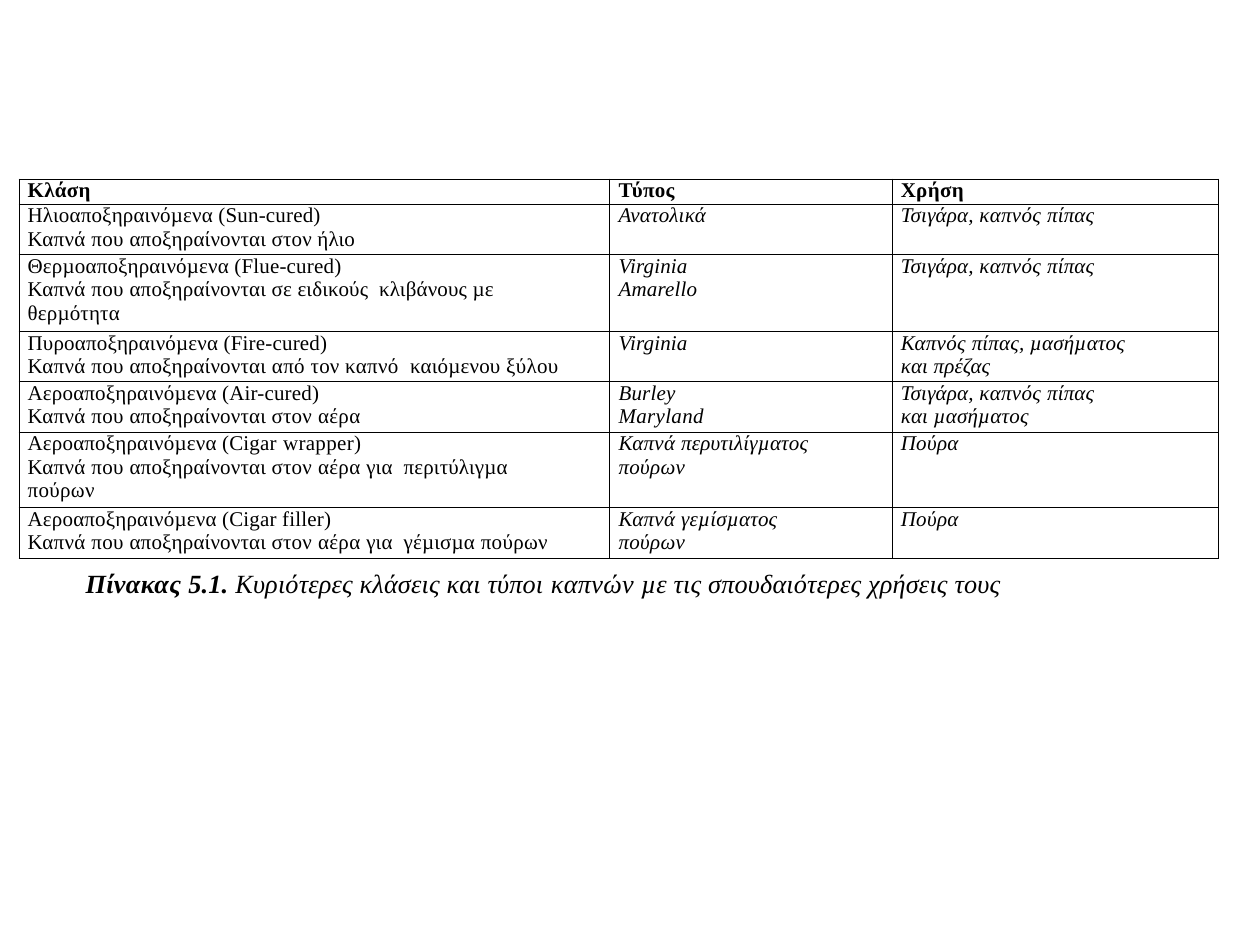
import dataclasses

import pptx
import pptx.dml.color
import pptx.oxml
import pptx.oxml.ns
import pptx.util

Inches = pptx.util.Inches
Pt = pptx.util.Pt


@dataclasses.dataclass
class Theme:
    font: str = "Times New Roman"
    ink: str = "000000"
    body: int = 12
    note: int = 15
    rule: float = 0.48
    tight: int = 10
    wide: int = 20


class Sheet:
    """Draws the elements of one slide in one theme; a bar in a text toggles tight and wide tracking."""

    def __init__(self, slide, theme):
        self.slide = slide
        self.theme = theme

    def runs(self, para, text, size, bold=False, italic=False):
        for n, part in enumerate(text.split("|")):
            if not part:
                continue
            run = para.add_run()
            run.text = part
            font = run.font
            font.name = self.theme.font
            font.size = Pt(size)
            font.bold = bold
            font.italic = italic
            font.color.rgb = pptx.dml.color.RGBColor.from_string(self.theme.ink)
            track = self.theme.wide if n % 2 else self.theme.tight
            run._r.get_or_add_rPr().set("spc", str(track))

    def border(self, cell):
        props = cell._tc.get_or_add_tcPr()
        space = pptx.oxml.ns.nsdecls("a")
        for n, side in enumerate(("lnL", "lnR", "lnT", "lnB")):
            props.insert(n, pptx.oxml.parse_xml(
                f'<a:{side} {space} w="{Pt(self.theme.rule)}"><a:solidFill>'
                f'<a:srgbClr val="{self.theme.ink}"/></a:solidFill></a:{side}>'))

    def cell(self, cell, text, bold, italic, right):
        cell.margin_left = Inches(0.07)
        cell.margin_right = Inches(right)
        cell.margin_top = cell.margin_bottom = 0
        cell.fill.background()
        self.border(cell)
        frame = cell.text_frame
        for n, line in enumerate(text.split("\n")):
            para = frame.add_paragraph() if n else frame.paragraphs[0]
            para.space_before = Pt(0.1 if n else 0)
            self.runs(para, line, self.theme.body, bold, italic)

    def table(self, rows, left, top, widths, heights):
        frame = self.slide.shapes.add_table(
            len(rows), len(widths), Inches(left), Inches(top),
            Inches(sum(widths)), Inches(sum(heights)))
        grid = frame.table
        grid.first_row = grid.horz_banding = False
        for col, width in zip(grid.columns, widths):
            col.width = Inches(width)
        for r, (row, height) in enumerate(zip(rows, heights)):
            grid.rows[r].height = Inches(height)
            for c, text in enumerate(row):
                self.cell(grid.cell(r, c), text, bold=r == 0,
                          italic=r > 0 and c > 0, right=0 if c else 0.3)

    def note(self, label, text, left, top, width, height):
        frame = self.slide.shapes.add_textbox(
            Inches(left), Inches(top), Inches(width), Inches(height)).text_frame
        frame.word_wrap = True
        frame.margin_left = frame.margin_right = 0
        frame.margin_top = frame.margin_bottom = 0
        para = frame.paragraphs[0]
        self.runs(para, label, self.theme.note, bold=True, italic=True)
        self.runs(para, text, self.theme.note, italic=True)


PIPE = "Τσιγάρα, |καπνός |πίπας"
DRIED = "|Καπνά που |αποξηραίνονται "
ROWS = [
    ("|Κλάση", "|Τύπος", "|Χρήση"),
    (f"Ηλιοαποξηραινόµενα (Sun-cured)\n{DRIED}στον ήλιο", "Ανατολικά", PIPE),
    (f"Θερµοαποξηραινόµενα (Flue-cured)\n{DRIED}σε ειδικούς  κλιβάνους µε θερµότητα",
     "Virginia\nAmarello", PIPE),
    (f"Πυροαποξηραινόµενα (Fire-cured)\n{DRIED}|από |τον |καπνό  |καιόµενου |ξύλου",
     "Virginia", "|Καπνός |πίπας, µασήµατος\nκαι πρέζας"),
    (f"Αεροαποξηραινόµενα (Air-cured)\n{DRIED}στον |αέρα",
     "Burley\n|Maryland", f"{PIPE}\nκαι µασήµατος"),
    (f"Αεροαποξηραινόµενα (Cigar| wrapper)\n{DRIED}στον |αέρα |για  περιτύλιγµα |πούρων",
     "|Καπνά |περυτιλίγµατος\n|πούρων", "|Πούρα"),
    (f"Αεροαποξηραινόµενα (Cigar filler)\n{DRIED}στον |αέρα |για  γέµισµα |πούρων",
     "|Καπνά |γεµίσµατος\n|πούρων", "|Πούρα"),
]


def main():
    deck = pptx.Presentation()
    deck.slide_width = Inches(10)
    deck.slide_height = Inches(7.5)
    sheet = Sheet(deck.slides.add_slide(deck.slide_layouts[6]), Theme())
    sheet.table(ROWS, 0.15, 1.42, (4.69, 2.24, 2.59),
                (0.2, 0.4, 0.61, 0.4, 0.4, 0.6, 0.4))
    sheet.note("|Πίνακας |5.1. ",
               "Κυριότερες κλάσεις και τύποι |καπνών |µε τις σπουδαιότερες χρήσεις τους",
               0.68, 4.5, 9.07, 0.25)
    deck.save("out.pptx")


if __name__ == "__main__":
    main()
